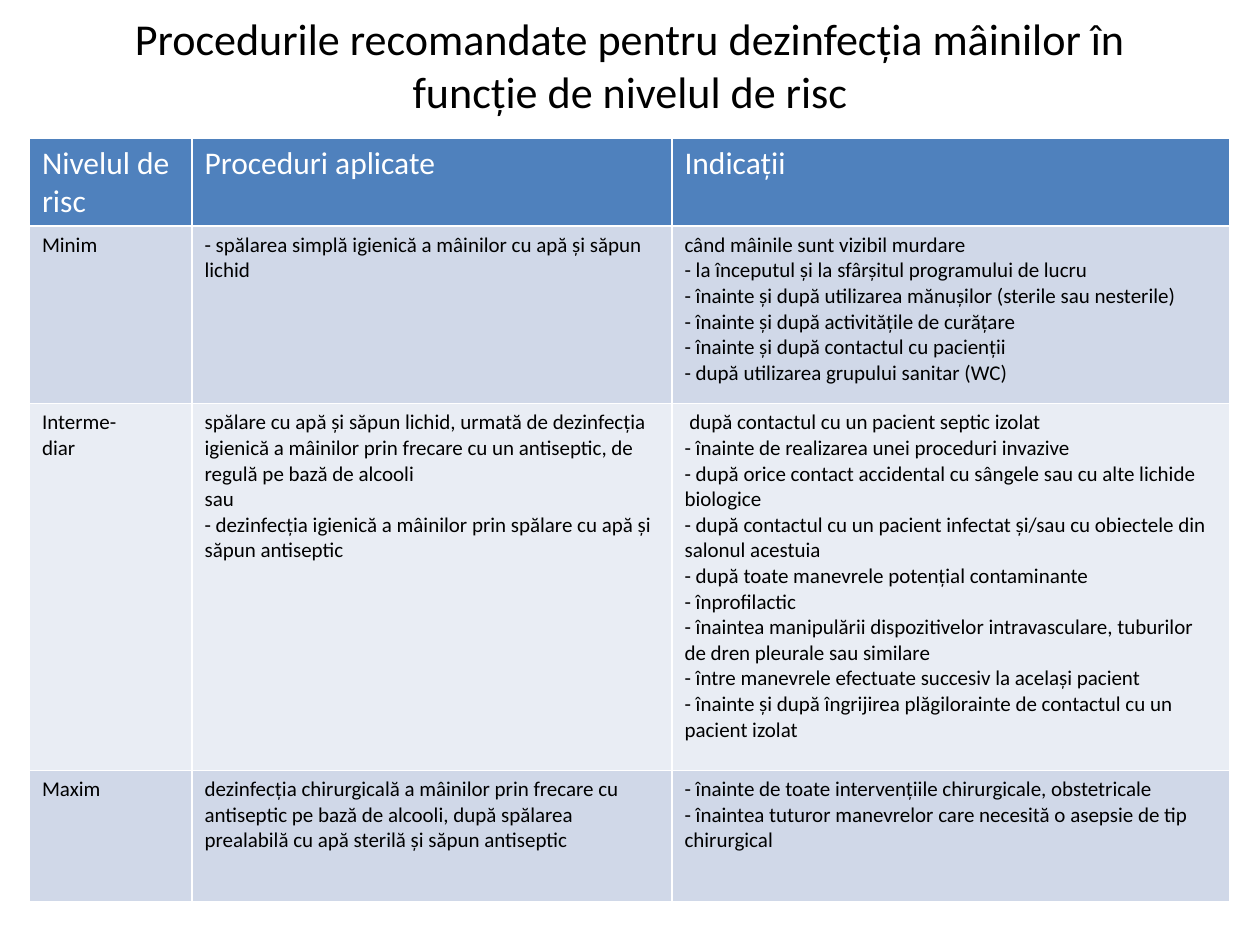
from pptx import Presentation
from pptx.dml.color import RGBColor
from pptx.enum.text import MSO_ANCHOR, PP_ALIGN
from pptx.util import Pt

CENTER = PP_ALIGN.CENTER
MIDDLE = MSO_ANCHOR.MIDDLE

FONT = "Calibri"
BLACK = RGBColor(0x00, 0x00, 0x00)
WHITE = RGBColor(0xFF, 0xFF, 0xFF)
HEADER_BLUE = RGBColor(0x4F, 0x81, 0xBD)
BAND_DARK = RGBColor(0xD0, 0xD8, 0xE8)
BAND_LIGHT = RGBColor(0xE9, 0xED, 0xF4)

TITLE = "Procedurile recomandate pentru dezinfecția mâinilor în funcție de nivelul de risc"
COLUMN_WIDTHS = (92.9, 274.3, 319)
ROW_HEIGHTS = (50.4, 101.5, 209.5, 74.9)

# Each line of a cell is one paragraph
ROWS = (
    ("Nivelul de risc", "Proceduri aplicate", "Indicații"),
    (
        "Minim",
        "- spălarea simplă igienică a mâinilor cu apă și săpun lichid",
        """când mâinile sunt vizibil murdare
- la începutul și la sfârșitul programului de lucru
- înainte și după utilizarea mănușilor (sterile sau nesterile)
- înainte și după activitățile de curățare
- înainte și după contactul cu pacienții
- după utilizarea grupului sanitar (WC)""",
    ),
    (
        """Interme-
diar""",
        """spălare cu apă și săpun lichid, urmată de dezinfecția igienică a mâinilor prin frecare cu un antiseptic, de regulă pe bază de alcooli
sau
- dezinfecția igienică a mâinilor prin spălare cu apă și săpun antiseptic""",
        """ după contactul cu un pacient septic izolat
- înainte de realizarea unei proceduri invazive
- după orice contact accidental cu sângele sau cu alte lichide biologice
- după contactul cu un pacient infectat și/sau cu obiectele din salonul acestuia
- după toate manevrele potențial contaminante
- înprofilactic
- înaintea manipulării dispozitivelor intravasculare, tuburilor de dren pleurale sau similare
- între manevrele efectuate succesiv la același pacient
- înainte și după îngrijirea plăgilorainte de contactul cu un pacient izolat""",
    ),
    (
        "Maxim",
        "dezinfecția chirurgicală a mâinilor prin frecare cu antiseptic pe bază de alcooli, după spălarea prealabilă cu apă sterilă și săpun antiseptic",
        """- înainte de toate intervențiile chirurgicale, obstetricale
- înaintea tuturor manevrelor care necesită o asepsie de tip chirurgical""",
    ),
)


def style_text(frame, size, color):
    for para in frame.paragraphs:
        para.font.name = FONT
        para.font.size = Pt(size)
        para.font.bold = False
        para.font.color.rgb = color


def add_title(page, left, top, width, height):
    box = page.shapes.add_textbox(Pt(left), Pt(top), Pt(width), Pt(height))
    frame = box.text_frame
    frame.word_wrap = True
    frame.vertical_anchor = MIDDLE
    frame.text = TITLE
    frame.paragraphs[0].alignment = CENTER
    style_text(frame, 25.2, BLACK)


def add_risk_table(page, left, top):
    # The default table style supplies the white cell borders
    table = page.shapes.add_table(
        len(ROWS), len(COLUMN_WIDTHS), Pt(left), Pt(top),
        Pt(sum(COLUMN_WIDTHS)), Pt(sum(ROW_HEIGHTS)),
    ).table
    for column, width in zip(table.columns, COLUMN_WIDTHS):
        column.width = Pt(width)

    for index, (row, height, texts) in enumerate(zip(table.rows, ROW_HEIGHTS, ROWS)):
        row.height = Pt(height)
        if index == 0:
            fill, size, color = HEADER_BLUE, 18, WHITE
        else:
            fill, size, color = (BAND_DARK if index % 2 else BAND_LIGHT), 12, BLACK
        for cell, text in zip(row.cells, texts):
            cell.fill.solid()
            cell.fill.fore_color.rgb = fill
            cell.text = text
            style_text(cell.text_frame, size, color)


def main():
    deck = Presentation()
    deck.slide_width, deck.slide_height = Pt(720), Pt(540)
    page = deck.slides.add_slide(deck.slide_layouts[6])
    add_title(page, 36, 0, 648, 73.5)
    add_risk_table(page, 16.8, 78.8)
    deck.save("out.pptx")


if __name__ == "__main__":
    main()
